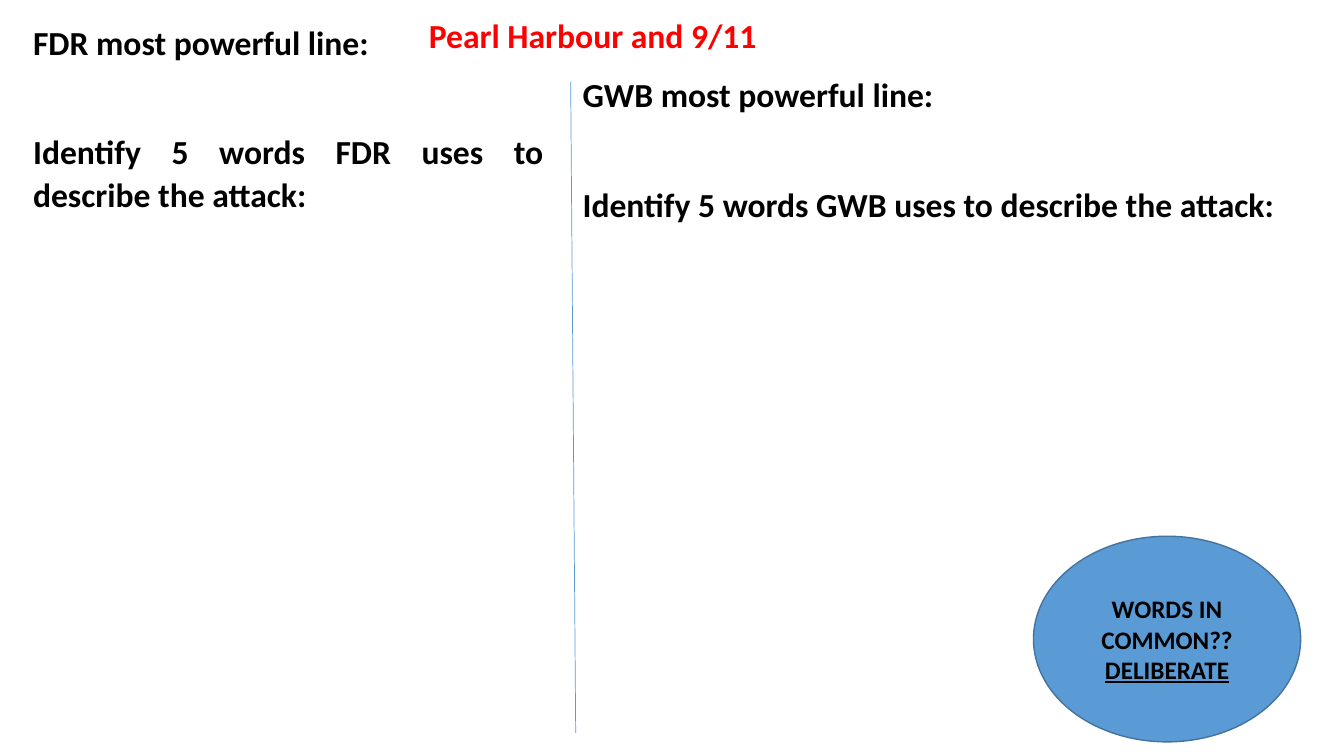
import pptx
import pptx.dml.color
import pptx.enum.shapes
import pptx.enum.text
import pptx.oxml
import pptx.util
from pptx.util import Inches

FONT = "Calibri"
COLORS = {
    "title": "FF0000",
    "text": "000000",
    "accent": "5B9BD5",
    "outline": "43739E",
}
ALIGN = pptx.enum.text.PP_ALIGN


def color(name):
    return pptx.dml.color.RGBColor.from_string(COLORS[name])


def format_paragraph(paragraph, size, color_name, alignment):
    paragraph.alignment = alignment
    for run in paragraph.runs:
        run.font.name = FONT
        run.font.size = pptx.util.Pt(size)
        run.font.bold = True
        run.font.color.rgb = color(color_name)


def place(shape, left, top, width, height):
    shape.left, shape.top = Inches(left), Inches(top)
    shape.width, shape.height = Inches(width), Inches(height)


def set_heading(slide, text):
    """Use the subtitle as the heading and drop the unused title."""
    title = slide.shapes.title
    title.element.getparent().remove(title.element)
    heading = slide.placeholders[1]
    place(heading, 0.66, 0.14, 10.44, 1.05)
    frame = heading.text_frame
    frame.text = text
    frame.auto_size = pptx.enum.text.MSO_AUTO_SIZE.NONE
    frame.vertical_anchor = pptx.enum.text.MSO_ANCHOR.TOP
    paragraph = frame.paragraphs[0]
    format_paragraph(paragraph, 24, "title", ALIGN.CENTER)
    paragraph.line_spacing = 0.9
    paragraph.space_before = pptx.util.Pt(10)


def add_speech_column(slide, speaker, left, top, width, height):
    """Add the two prompts for one speaker, with writing room between them."""
    box = slide.shapes.add_textbox(
        Inches(left), Inches(top), Inches(width), Inches(height))
    frame = box.text_frame
    frame.word_wrap = True
    frame.text = (f"{speaker} most powerful line:\n"
                  f"Identify 5 words {speaker} uses to describe the attack:")
    for paragraph, space_after in zip(frame.paragraphs, (47.3, 8)):
        format_paragraph(paragraph, 24, "text", ALIGN.JUSTIFY)
        paragraph.line_spacing = 1.07
        paragraph.space_after = pptx.util.Pt(space_after)


def add_divider(slide):
    divider = slide.shapes.add_connector(
        pptx.enum.shapes.MSO_CONNECTOR.STRAIGHT,
        Inches(5.66), Inches(0.81), Inches(5.71), Inches(7.27))
    divider.line.color.rgb = color("accent")
    divider.line.width = pptx.util.Pt(0.5)
    divider.element.spPr.append(pptx.oxml.parse_xml(
        '<a:effectLst xmlns:a='
        '"http://schemas.openxmlformats.org/drawingml/2006/main"/>'))


def add_common_words_ellipse(slide):
    ellipse = slide.shapes.add_shape(
        pptx.enum.shapes.MSO_SHAPE.OVAL,
        Inches(10.25), Inches(5.32), Inches(2.65), Inches(2.04))
    ellipse.shadow.inherit = False
    ellipse.fill.solid()
    ellipse.fill.fore_color.rgb = color("accent")
    ellipse.line.color.rgb = color("outline")
    ellipse.line.width = pptx.util.Pt(1)
    frame = ellipse.text_frame
    frame.word_wrap = True
    frame.vertical_anchor = pptx.enum.text.MSO_ANCHOR.MIDDLE
    frame.text = "WORDS IN COMMON??\nDELIBERATE"
    for paragraph in frame.paragraphs:
        format_paragraph(paragraph, 18, "text", ALIGN.CENTER)
    frame.paragraphs[1].runs[0].font.underline = True


def main():
    presentation = pptx.Presentation()
    presentation.slide_width = Inches(13.33)
    presentation.slide_height = Inches(7.5)
    slide = presentation.slides.add_slide(presentation.slide_layouts[0])
    set_heading(slide, "Pearl Harbour and 9/11")
    add_speech_column(slide, "FDR", 0.23, 0.14, 5.26, 5.3)
    add_speech_column(slide, "GWB", 5.68, 0.66, 7.22, 7.05)
    add_divider(slide)
    add_common_words_ellipse(slide)
    presentation.save("out.pptx")


if __name__ == "__main__":
    main()
